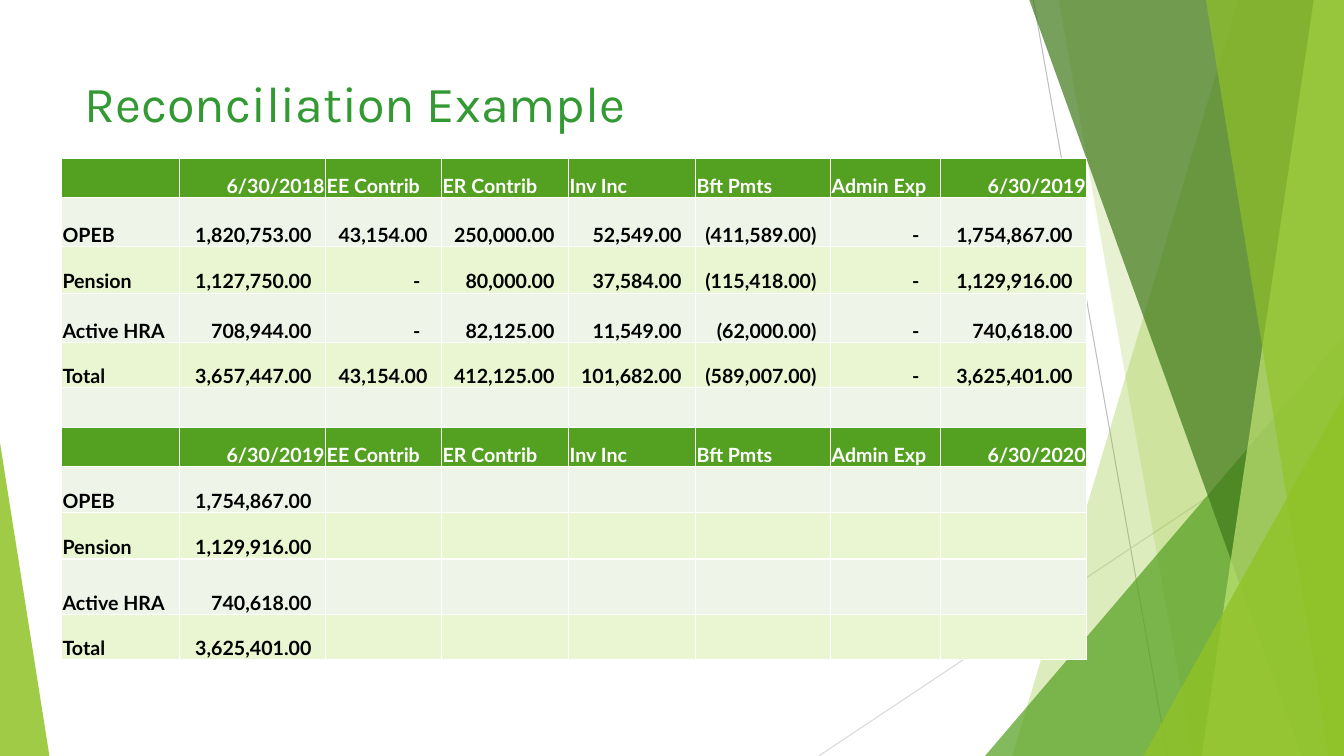
from pptx import Presentation
from pptx import util as u
from pptx.dml.color import RGBColor
from pptx.enum import shapes, text
from pptx.oxml.ns import qn
from lxml import etree


def tint(code):
    return RGBColor.from_string(code)


class Deck:
    """Draws styled elements on one slide, with lengths in percent of its size."""

    green, lime, leaf = "54A021", "90C226", "C0E474"
    pine, white, black = "3F7819", "FFFFFF", "000000"
    bands = ("EEF4E8", "EAF6D1")

    def __init__(self):
        self.show = Presentation()
        self.show.slide_width = u.Inches(13.33)
        self.show.slide_height = u.Inches(7.5)
        self.slide = self.show.slides.add_slide(self.show.slide_layouts[6])
        self.items = self.slide.shapes

    def x(self, share):
        return round(self.show.slide_width * share / 100)

    def y(self, share):
        return round(self.show.slide_height * share / 100)

    def box(self, left, top, wide, high):
        return self.x(left), self.y(top), self.x(wide), self.y(high)

    def font(self, para, size, name, color, bold=False):
        para.font.size, para.font.name = u.Pt(size), name
        para.font.bold = bold
        para.font.color.rgb = tint(color)

    def paint(self, item, color, alpha):
        item.shadow.inherit = False
        item.line.fill.background()
        item.fill.solid()
        item.fill.fore_color.rgb = tint(color)
        clr = item._element.spPr.find(qn("a:solidFill"))[0]
        etree.SubElement(clr, qn("a:alpha"), val=str(alpha * 1000))

    def line(self, x1, y1, x2, y2, color):
        rule = self.items.add_connector(
            shapes.MSO_CONNECTOR.STRAIGHT,
            self.x(x1), self.y(y1), self.x(x2), self.y(y2))
        rule.line.color.rgb = tint(color)
        rule.line.width = u.Pt(0.75)
        etree.SubElement(rule._element.spPr, qn("a:effectLst"))

    def band(self, top, foot, color, alpha):
        pen = self.items.build_freeform(self.x(top), 0)
        pen.add_line_segments([
            (self.x(100), 0), (self.x(100), self.y(100)),
            (self.x(foot), self.y(100))])
        self.paint(pen.convert_to_shape(), color, alpha)

    def wedge(self, left, top, wide, peak, color, alpha):
        item = self.items.add_shape(
            shapes.MSO_SHAPE.ISOSCELES_TRIANGLE,
            *self.box(left, top, wide, 100 - top))
        item.adjustments[0] = peak
        self.paint(item, color, alpha)

    def title(self, words, *place):
        frame = self.items.add_textbox(*self.box(*place)).text_frame
        frame.word_wrap = True
        para = frame.paragraphs[0]
        para.text = words
        self.font(para, 36, "Karla", "339933")

    def edge(self, cell):
        props = cell._tc.get_or_add_tcPr()
        for spot, side in enumerate(("lnL", "lnR", "lnT", "lnB")):
            ln = etree.Element(qn("a:" + side), w=str(u.Pt(1)))
            fill = etree.SubElement(ln, qn("a:solidFill"))
            etree.SubElement(fill, qn("a:srgbClr"), val=self.white)
            props.insert(spot, ln)

    def cell(self, cell, words, fill, color, inset):
        cell.fill.solid()
        cell.fill.fore_color.rgb = tint(fill)
        cell.vertical_anchor = text.MSO_ANCHOR.BOTTOM
        cell.margin_left = cell.margin_top = u.Inches(0.01)
        cell.margin_bottom = 0
        cell.margin_right = u.Inches(inset)
        para = cell.text_frame.paragraphs[0]
        para.text = words
        self.font(para, 14, "Lato", color, True)
        if words.endswith(tuple("0123456789)-")):
            para.alignment = text.PP_ALIGN.RIGHT
        self.edge(cell)

    def table(self, left, top, cols, rows, data):
        grid = self.items.add_table(
            len(rows), len(cols),
            *self.box(left, top, sum(cols), sum(rows))).table
        for col, wide in zip(grid.columns, cols):
            col.width = self.x(wide)
        for row, high in zip(grid.rows, rows):
            row.height = self.y(high)
        count = 0
        for row, line in zip(grid.rows, data):
            head = "EE Contrib" in line
            count = 0 if head else count + 1
            fill = self.green if head else self.bands[(count - 1) % 2]
            color = self.white if head else self.black
            line = line + [""] * (len(cols) - len(line))
            for cell, words in zip(row.cells, line):
                inset = 0.21 if words == "-" else 0.14
                if head or not words.endswith(("0", "1", ")", "-")):
                    inset = 0.01
                if words[:1].isdigit() and not head:
                    inset = 0.14
                self.cell(cell, words, fill, color, inset)


def main():
    deck = Deck()
    deck.line(76.89, 0, 86.87, 100, "BFBFBF")
    deck.line(100, 53.73, 60.92, 100, "D9D9D9")
    deck.band(92.12, 75.32, deck.lime, 30)
    deck.band(78.77, 88.75, deck.lime, 20)
    deck.wedge(73.29, 44.4, 26.71, 1, deck.green, 72)
    deck.band(76.59, 96.85, deck.pine, 70)
    deck.band(97.75, 89.42, deck.leaf, 70)
    deck.band(89.72, 98.87, deck.lime, 65)
    deck.wedge(85.07, 52.4, 14.93, 1, deck.lime, 80)
    deck.wedge(0, 58.53, 3.68, 0, deck.lime, 85)
    deck.title("Reconciliation Example", 5.55, 8.93, 70.52, 19.2)

    flows = ["EE Contrib", "ER Contrib", "Inv Inc", "Bft Pmts", "Admin Exp"]
    funds = [
        ["OPEB", "1,820,753.00", "43,154.00", "250,000.00", "52,549.00",
         "(411,589.00)", "-", "1,754,867.00"],
        ["Pension", "1,127,750.00", "-", "80,000.00", "37,584.00",
         "(115,418.00)", "-", "1,129,916.00"],
        ["Active HRA", "708,944.00", "-", "82,125.00", "11,549.00",
         "(62,000.00)", "-", "740,618.00"],
        ["Total", "3,657,447.00", "43,154.00", "412,125.00", "101,682.00",
         "(589,007.00)", "-", "3,625,401.00"],
    ]
    data = [["", "6/30/2018", *flows, "6/30/2019"], *funds, [],
            ["", "6/30/2019", *flows, "6/30/2020"],
            *[[fund[0], fund[-1]] for fund in funds]]
    cols = [8.78, 10.88, 8.63, 9.45, 9.45, 10.05, 8.18, 10.88]
    rows = [5.2, 6.53, 6.13, 6.53, 6, 5.2, 5.2, 6.13, 6.13, 7.33, 6]
    deck.table(4.58, 20.93, cols, rows, data)
    deck.show.save("out.pptx")


if __name__ == "__main__":
    main()
